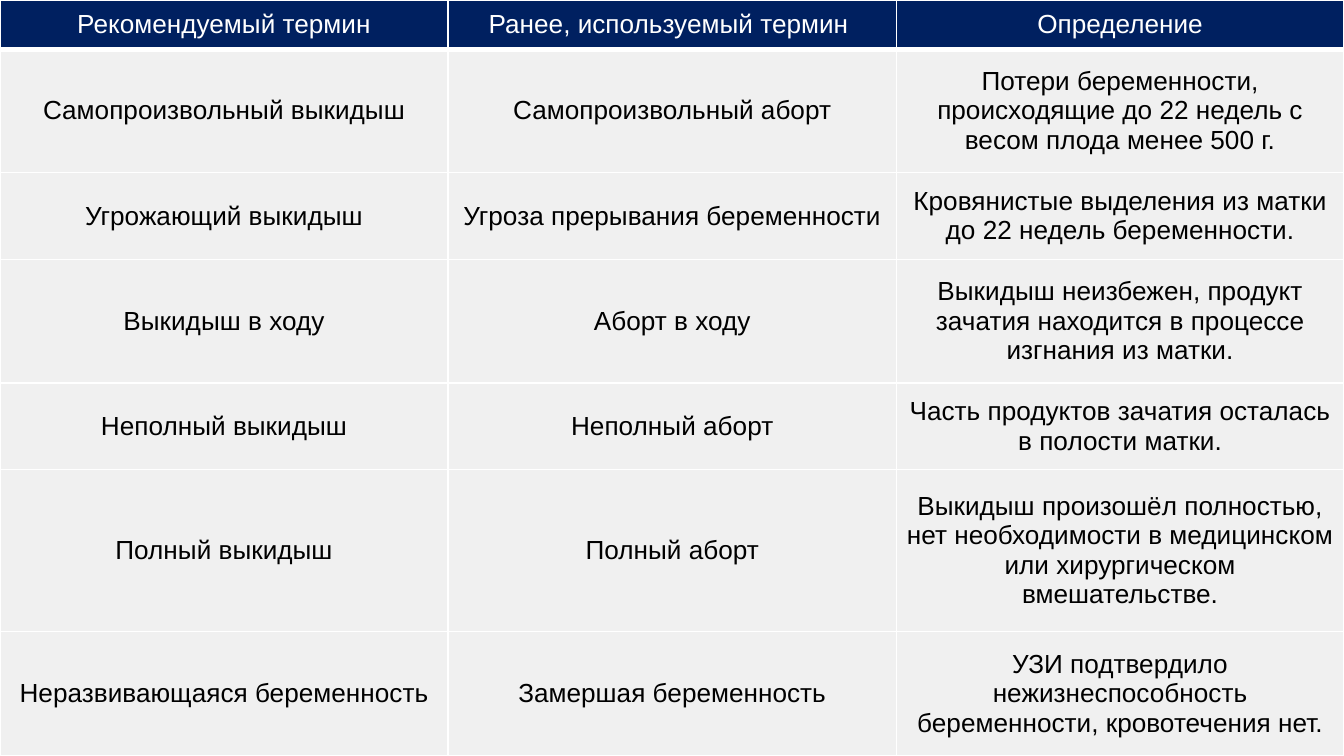
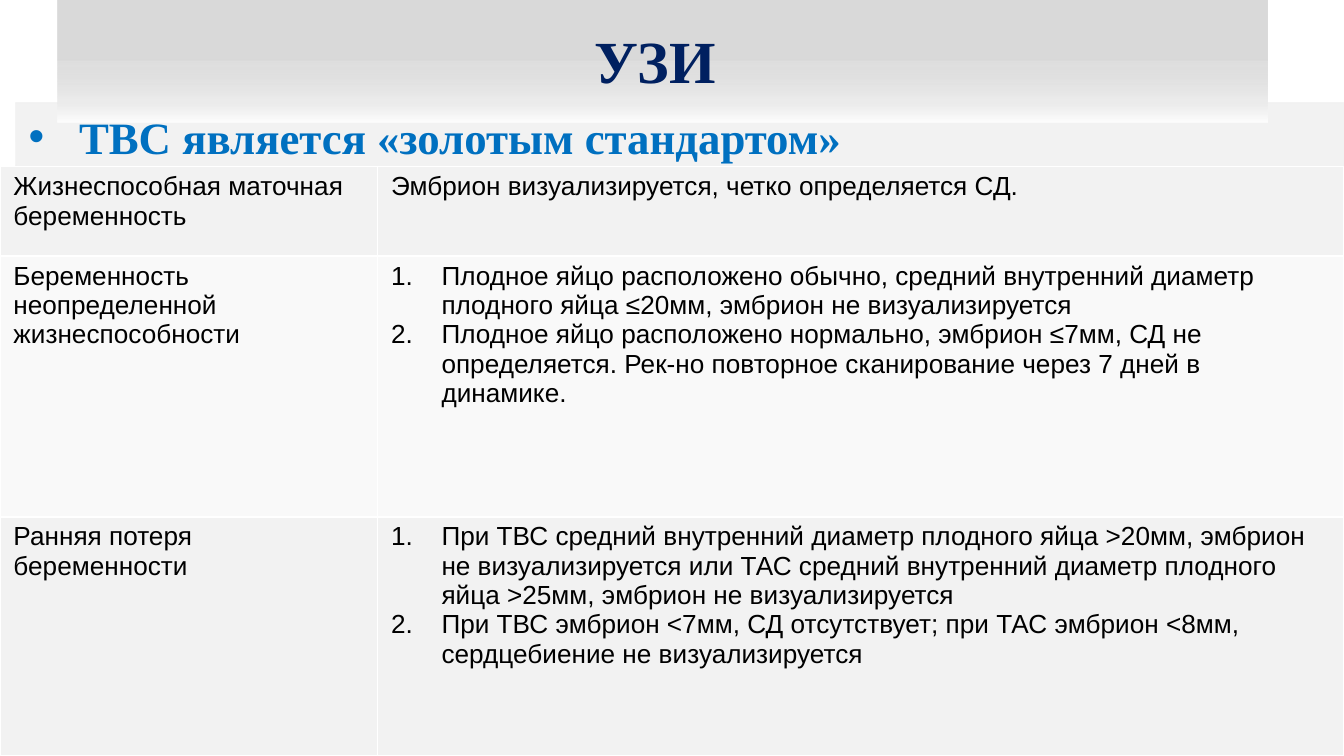
from lxml.etree import SubElement
from pptx import Presentation
from pptx.dml.color import RGBColor
from pptx.enum.shapes import MSO_SHAPE as Preset
from pptx.enum.text import MSO_ANCHOR as Anchor, PP_ALIGN as Align
from pptx.oxml import parse_xml
from pptx.oxml.ns import nsdecls, qn
from pptx.util import Pt

SCALE = 4572
WIDTH, HEIGHT = 2000, 1125
NAVY, BLUE, BLACK, WHITE = "002060", "0070C0", "000000", "FFFFFF"
TERM_GRAY, LIGHT_GRAY, PALE_GRAY = "F0F0F0", "F2F2F2", "F9F9F9"
BODY_FONT, HEADING_FONT = "Arial", "Times New Roman"
HANGING = 75

TERMS = [
    ("Рекомендуемый термин", "Ранее, используемый термин ", "Определение"),
    ("Самопроизвольный выкидыш", "Самопроизвольный аборт",
     "Потери беременности, происходящие до 22 недель с весом плода менее 500 г."),
    ("Угрожающий выкидыш", "Угроза прерывания беременности",
     "Кровянистые выделения из матки до 22 недель беременности."),
    ("Выкидыш в ходу", "Аборт в ходу",
     "Выкидыш неизбежен, продукт зачатия находится в процессе изгнания из матки."),
    ("Неполный выкидыш", "Неполный аборт",
     "Часть продуктов зачатия осталась в полости матки."),
    ("Полный выкидыш", "Полный аборт",
     "Выкидыш произошёл полностью, нет необходимости в медицинском или "
     "хирургическом вмешательстве."),
    ("Неразвивающаяся беременность", "Замершая беременность",
     "УЗИ подтвердило нежизнеспособность беременности, кровотечения нет."),
]

FINDINGS = [
    ("Жизнеспособная маточная беременность",
     "Эмбрион визуализируется, четко определяется СД."),
    ("Беременность неопределенной жизнеспособности", [
        "Плодное яйцо расположено обычно, средний внутренний диаметр плодного "
        "яйца ≤20мм, эмбрион не визуализируется",
        "Плодное яйцо расположено нормально, эмбрион ≤7мм, СД не определяется. "
        "Рек-но повторное сканирование через 7 дней в динамике."]),
    ("Ранняя потеря беременности", [
        "При ТВС средний внутренний диаметр плодного яйца >20мм, эмбрион не "
        "визуализируется или ТАС средний внутренний диаметр плодного яйца >25мм, "
        "эмбрион не визуализируется",
        "При ТВС эмбрион <7мм, СД отсутствует; при ТАС эмбрион <8мм, "
        "сердцебиение не визуализируется"]),
]


def px(*lengths):
    return [length * SCALE for length in lengths]


def color(value):
    return RGBColor.from_string(value)


def add_bullet(paragraph, kind):
    properties = paragraph._p.get_or_add_pPr()
    properties.set("marL", str(HANGING * SCALE))
    properties.set("indent", str(-HANGING * SCALE))
    SubElement(properties, qn("a:buFont"), typeface=BODY_FONT)
    if kind == "number":
        SubElement(properties, qn("a:buAutoNum"), type="arabicPeriod")
    else:
        SubElement(properties, qn("a:buChar"), char=kind)


def write_text(frame, text, size=14, font=BODY_FONT, ink=BLACK, bold=False,
               align=Align.LEFT, bullet=None):
    frame.word_wrap = True
    lines = [text] if isinstance(text, str) else text
    for index, line in enumerate(lines):
        paragraph = frame.add_paragraph() if index else frame.paragraphs[0]
        paragraph.alignment = align
        if bullet:
            add_bullet(paragraph, bullet)
        run = paragraph.add_run()
        run.text = line
        run.font.name, run.font.size, run.font.bold = font, Pt(size), bold
        run.font.color.rgb = color(ink)


def set_borders(cell, bottom):
    properties = cell._tc.get_or_add_tcPr()
    for index, (side, points) in enumerate(
            [("L", 1), ("R", 1), ("T", 1), ("B", bottom)]):
        properties.insert(index, parse_xml(
            f'<a:ln{side} {nsdecls("a")} w="{Pt(points)}"><a:solidFill>'
            f'<a:srgbClr val="{WHITE}"/></a:solidFill></a:ln{side}>'))


def fill_cell(cell, text, fill, inset, anchor, bottom=1, **text_format):
    cell.fill.solid()
    cell.fill.fore_color.rgb = color(fill)
    set_borders(cell, bottom)
    cell.margin_left, cell.margin_right = px(inset, inset)
    cell.margin_top, cell.margin_bottom = px(8, 8)
    cell.vertical_anchor = anchor
    write_text(cell.text_frame, text, **text_format)


def add_grid(slide, box, widths, heights):
    frame = slide.shapes.add_table(len(heights), len(widths), *px(*box))
    table = frame.table
    table.first_row = table.horz_banding = False
    for column, width in zip(table.columns, px(*widths)):
        column.width = width
    for row, height in zip(table.rows, px(*heights)):
        row.height = height
    return table


def add_gradient_box(slide, box, stops, anchor):
    shape = slide.shapes.add_shape(Preset.RECTANGLE, *px(*box))
    shape.shadow.inherit = False
    shape.line.fill.background()
    shape.fill.gradient()
    shape.fill.gradient_angle = 270
    stop_list = shape._element.spPr.find(qn("a:gradFill")).find(qn("a:gsLst"))
    for stop in list(stop_list):
        stop_list.remove(stop)
    for position, value, opacity in stops:
        stop = SubElement(stop_list, qn("a:gs"), pos=str(position * 1000))
        tint = SubElement(stop, qn("a:srgbClr"), val=value)
        if opacity < 100:
            SubElement(tint, qn("a:alpha"), val=str(opacity * 1000))
    shape.text_frame.vertical_anchor = anchor
    return shape.text_frame


def build_terms(slide, box):
    left, top, width, height = box
    heights = [73, 184, 129, 184, 129, 241]
    heights.append(height - sum(heights))
    third = round(width / 3)
    table = add_grid(slide, box, [third, third, width - 2 * third], heights)
    for row, texts in enumerate(TERMS):
        fill, ink, bottom = (TERM_GRAY, BLACK, 1) if row else (NAVY, WHITE, 3)
        for column, text in enumerate(texts):
            fill_cell(table.cell(row, column), text, fill, 14, Anchor.MIDDLE,
                      bottom, ink=ink, align=Align.CENTER)


def build_findings(slide, box):
    left, top, width, height = box
    heights = [133, 388]
    heights.append(height - sum(heights))
    table = add_grid(slide, box, [562, width - 562], heights)
    for row, texts in enumerate(FINDINGS):
        for column, text in enumerate(texts):
            fill_cell(table.cell(row, column), text,
                      PALE_GRAY if row % 2 else LIGHT_GRAY, 20, Anchor.TOP,
                      bullet="number" if isinstance(text, list) else None)


def build_ultrasound(slide, box):
    left, top, width, height = box
    standard = add_gradient_box(
        slide, (left + 23, top + 153, width - 23, 722),
        [(0, LIGHT_GRAY, 100), (50, LIGHT_GRAY, 87), (100, LIGHT_GRAY, 87)],
        Anchor.TOP)
    write_text(standard, "ТВС является «золотым стандартом»", size=24,
               font=HEADING_FONT, ink=BLUE, bold=True, bullet="•")
    title = add_gradient_box(
        slide, (left + 86, top - 5, 1800, 188),
        [(50, "D9D9D9", 100), (51, "BFBFBF", 50), (100, WHITE, 100)],
        Anchor.MIDDLE)
    write_text(title, "УЗИ ", size=32, font=HEADING_FONT, ink=NAVY, bold=True,
               align=Align.CENTER)
    build_findings(slide, (left, top + 248, width, height - 248))


def main():
    presentation = Presentation()
    presentation.slide_width, presentation.slide_height = px(WIDTH, HEIGHT)
    for build in (build_terms, build_ultrasound):
        slide = presentation.slides.add_slide(presentation.slide_layouts[6])
        build(slide, (0, 0, WIDTH, HEIGHT))
    presentation.save("out.pptx")


if __name__ == "__main__":
    main()
